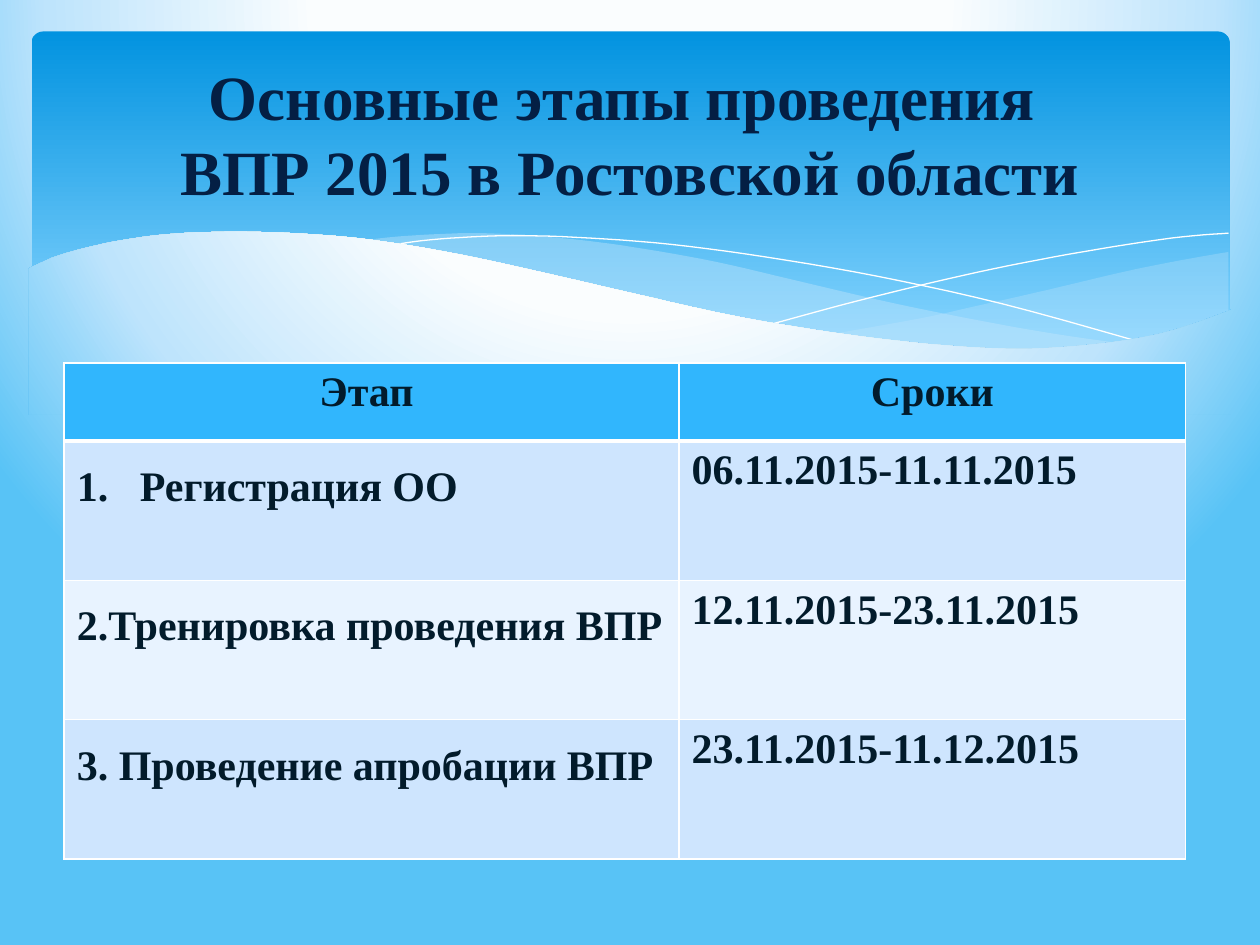
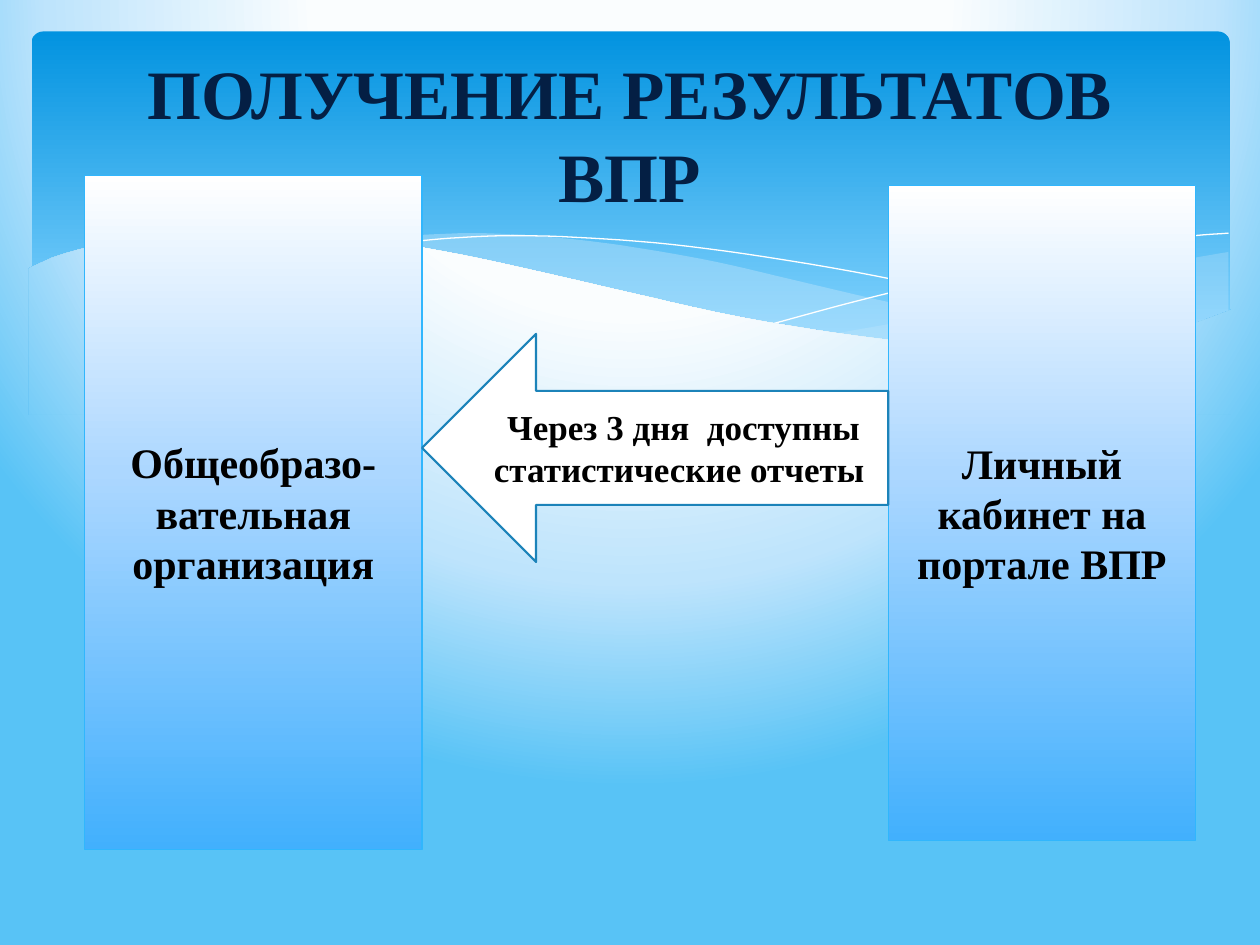
from lxml import etree
from pptx import Presentation
from pptx.dml.color import RGBColor
from pptx.enum.shapes import MSO_SHAPE
from pptx.enum.text import MSO_ANCHOR, MSO_AUTO_SIZE, PP_ALIGN
from pptx.oxml.ns import qn
from pptx.util import Inches, Pt

FONT = "Times New Roman"
TITLE_NAVY = RGBColor(0x04, 0x1F, 0x44)
TABLE_TEXT = RGBColor(0x02, 0x1B, 0x2B)
BLACK = RGBColor(0, 0, 0)
WHITE = RGBColor(0xFF, 0xFF, 0xFF)
ACCENT_BLUE = RGBColor(0x31, 0xB6, 0xFD)
ARROW_BLUE = RGBColor(0x1C, 0x83, 0xB9)
WAVE_TINT = RGBColor(0xC6, 0xE7, 0xFC)
ROW_FILLS = (RGBColor(0xCE, 0xE5, 0xFE), RGBColor(0xE8, 0xF3, 0xFF))

# Gradient stops: position in percent, colour
SKY_STOPS = ((40, RGBColor(0xFA, 0xFD, 0xFE)), (74, RGBColor(0xBE, 0xE4, 0xFC)),
             (100, RGBColor(0x58, 0xC3, 0xF6)))
BAND_STOPS = ((0, RGBColor(0x02, 0x93, 0xE0)), (90, RGBColor(0x83, 0xD3, 0xFE)))
PANEL_STOPS = ((0, WHITE), (44, RGBColor(0xAC, 0xD7, 0xFF)),
               (100, RGBColor(0x42, 0xB0, 0xFD)))
SKY_FOCUS = {"l": 20, "t": -40, "r": 20, "b": 140}

# Boxes: left, top, width, height in inches
BAND_BOX = (0.25, 0.25, 9.51, 2.7)
TITLE_BOX = (0.5, 0.37, 9, 1.37)

# Wave outlines in inches from the corner of the band
UNITS_PER_INCH = 1000
RIGHT_SWELL_TOP = [(9.5, 1.75), (9.1, 1.82), (8.66, 1.91), (8.07, 2.05),
                   (7.54, 2.17), (7.04, 2.28), (6.36, 2.4)]
RIGHT_SWELL_BOTTOM = [(6.36, 2.4), (6.8, 2.46), (7.2, 2.5), (7.67, 2.52), (8.1, 2.52),
                      (8.56, 2.48), (8.96, 2.4), (9.24, 2.32), (9.5, 2.22)]
MIDDLE_SWELL_TOP = [(8.68, 2.48), (8.12, 2.4), (7.5, 2.29), (6.81, 2.15), (6.04, 1.97),
                    (5.44, 1.83), (4.89, 1.73), (4.4, 1.66), (3.95, 1.62), (3.55, 1.6),
                    (3.19, 1.61), (2.88, 1.63), (2.61, 1.66)]
MIDDLE_SWELL_BOTTOM = [(2.61, 1.66), (3.17, 1.74), (3.79, 1.86), (4.24, 1.97), (5.05, 2.15),
                       (5.76, 2.3), (6.4, 2.41), (6.97, 2.49), (7.48, 2.52), (7.93, 2.53),
                       (8.32, 2.52), (8.68, 2.48)]
FALLING_LINE = [(2.84, 1.7), (3.1, 1.66), (3.49, 1.63), (3.91, 1.62), (4.44, 1.64),
                (5.08, 1.69), (5.83, 1.79), (6.7, 1.94), (7.7, 2.16), (8.82, 2.47)]
RISING_LINE = [(5.88, 2.32), (6.47, 2.16), (6.95, 2.04), (7.51, 1.91), (8.11, 1.79),
               (8.7, 1.69), (9.13, 1.63), (9.5, 1.6)]
FRONT_WAVE = [(9.52, 2.21), (9.25, 2.31), (8.95, 2.4), (8.62, 2.46), (8.25, 2.5),
              (7.84, 2.52), (7.36, 2.5), (6.83, 2.45), (6.23, 2.37), (5.54, 2.25),
              (4.78, 2.08), (4.22, 1.95), (3.4, 1.77), (2.67, 1.65), (2.05, 1.6),
              (1.52, 1.59), (1.07, 1.61), (0.7, 1.66), (0.42, 1.72), (0.21, 1.78),
              (0.11, 1.82), (-0.02, 1.88)]
FRONT_WAVE_BASE = [(-0.02, 3.04), (9.52, 3.04)]

STAGES = [("Регистрация ОО", "06.11.2015-11.11.2015"),
          ("2.Тренировка проведения ВПР", "12.11.2015-23.11.2015"),
          ("3. Проведение апробации ВПР", "23.11.2015-11.12.2015")]


def to_inches(box):
    return [Inches(length) for length in box]


def set_gradient(fill, owner, stops, focus=None):
    """Fill with a vertical gradient, or a circular one around a focus."""
    fill.gradient()
    gradient = next(owner.iter(qn("a:gradFill")))
    for child in list(gradient):
        gradient.remove(child)
    stop_list = etree.SubElement(gradient, qn("a:gsLst"))
    for position, color in stops:
        stop = etree.SubElement(stop_list, qn("a:gs"), pos=str(position * 1000))
        etree.SubElement(stop, qn("a:srgbClr"), val=str(color))
    if focus:
        circle = etree.SubElement(gradient, qn("a:path"), path="circle")
        edges = {side: str(percent * 1000) for side, percent in focus.items()}
        etree.SubElement(circle, qn("a:fillToRect"), **edges)
    else:
        etree.SubElement(gradient, qn("a:lin"), ang="5400000", scaled="1")


def add_text(paragraph, text, size, color, alignment=PP_ALIGN.CENTER):
    paragraph.alignment = alignment
    for index, line in enumerate(text.split("\n")):
        if index:
            paragraph.add_line_break()
        run = paragraph.add_run()
        run.text = line
        run.font.name = FONT
        run.font.size = Pt(size)
        run.font.bold = True
        run.font.color.rgb = color


def smooth(points, steps=5):
    """Return a Catmull-Rom curve through the points."""
    padded = [points[0], *points, points[-1]]
    curve = [points[0]]
    for a, b, c, d in zip(padded, padded[1:], padded[2:], padded[3:]):
        for step in range(1, steps + 1):
            t = step / steps
            curve.append(tuple(
                b[i] + t * (c[i] - a[i]) / 2
                + t**2 * (2 * a[i] - 5 * b[i] + 4 * c[i] - d[i]) / 2
                + t**3 * (3 * b[i] - a[i] - 3 * c[i] + d[i]) / 2
                for i in (0, 1)))
    return curve


def add_outline(slide, box, points, close):
    start, *rest = [(round(x * UNITS_PER_INCH), round(y * UNITS_PER_INCH)) for x, y in points]
    builder = slide.shapes.build_freeform(*start, scale=Inches(1) / UNITS_PER_INCH)
    builder.add_line_segments(rest, close=close)
    shape = builder.convert_to_shape(*to_inches(box[:2]))
    shape.shadow.inherit = False
    return shape


def add_wave_band(slide, box):
    # Blue band
    band = slide.shapes.add_shape(MSO_SHAPE.ROUNDED_RECTANGLE, *to_inches(box))
    band.adjustments[0] = 0.034
    band.shadow.inherit = False
    band.line.fill.background()
    set_gradient(band.fill, band._element, BAND_STOPS)

    # Translucent swells
    for top, bottom, opacity in ((RIGHT_SWELL_TOP, RIGHT_SWELL_BOTTOM, 29),
                                 (MIDDLE_SWELL_TOP, MIDDLE_SWELL_BOTTOM, 40)):
        swell = add_outline(slide, box, smooth(top) + smooth(bottom), True)
        swell.line.fill.background()
        swell.fill.solid()
        swell.fill.fore_color.rgb = WAVE_TINT
        color = next(swell._element.iter(qn("a:srgbClr")))
        etree.SubElement(color, qn("a:alpha"), val=str(opacity * 1000))

    # Thin crossing lines
    for points in (FALLING_LINE, RISING_LINE):
        curve = add_outline(slide, box, smooth(points), False)
        curve.fill.background()
        curve.line.color.rgb = WHITE
        curve.line.width = Pt(0)

    # Front wave, filled with the slide background
    wave = add_outline(slide, box, smooth(FRONT_WAVE) + FRONT_WAVE_BASE, True)
    wave.line.fill.background()
    wave._element.set("useBgFill", "1")


def add_title(slide, box, text, size):
    title = slide.shapes.title
    title.left, title.top, title.width, title.height = to_inches(box)
    frame = title.text_frame
    frame.word_wrap = True
    frame.auto_size = MSO_AUTO_SIZE.NONE
    frame.vertical_anchor = MSO_ANCHOR.MIDDLE
    add_text(frame.paragraphs[0], text, size, TITLE_NAVY)
    # Bring the title in front of the band
    slide.shapes._spTree.append(title._element)


def add_wave_slide(presentation, title, title_size):
    slide = presentation.slides.add_slide(presentation.slide_layouts[5])
    set_gradient(slide.background.fill, slide._element, SKY_STOPS, SKY_FOCUS)
    add_wave_band(slide, BAND_BOX)
    add_title(slide, TITLE_BOX, title, title_size)
    return slide


def format_cell(cell, fill, top=1, bottom=1):
    properties = cell._tc.get_or_add_tcPr()
    for side, width in (("L", 1), ("R", 1), ("T", top), ("B", bottom)):
        border = etree.SubElement(properties, qn(f"a:ln{side}"), w=str(Pt(width)))
        solid = etree.SubElement(border, qn("a:solidFill"))
        etree.SubElement(solid, qn("a:srgbClr"), val=str(WHITE))
    cell.fill.solid()
    cell.fill.fore_color.rgb = fill


def number_paragraph(paragraph):
    properties = paragraph._p.get_or_add_pPr()
    properties.set("marL", str(Inches(0.5)))
    properties.set("indent", str(Inches(-0.5)))
    etree.SubElement(properties, qn("a:buFont"), typeface="+mj-lt")
    etree.SubElement(properties, qn("a:buAutoNum"), type="arabicPeriod")


def add_stage_table(slide, box):
    left, top, width, height = box
    header_height = 0.62
    table = slide.shapes.add_table(len(STAGES) + 1, 2, *to_inches(box)).table
    table.horz_banding = False
    table.columns[0].width = Inches(4.88)
    table.columns[1].width = Inches(width - 4.88)
    for row in table.rows:
        row.height = Inches((height - header_height) / len(STAGES))
    table.rows[0].height = Inches(header_height)

    # Header row
    for column, heading in enumerate(("Этап ", "Сроки")):
        cell = table.cell(0, column)
        format_cell(cell, ACCENT_BLUE, bottom=3)
        add_text(cell.text_frame.paragraphs[0], heading, 24, TABLE_TEXT)

    # Stage rows
    for index, stage in enumerate(STAGES):
        for column, text in enumerate(stage):
            cell = table.cell(index + 1, column)
            format_cell(cell, ROW_FILLS[index % 2], top=1 if index else 3)
            add_text(cell.text_frame.paragraphs[0], text, 24, TABLE_TEXT, PP_ALIGN.LEFT)
        stage_cell = table.cell(index + 1, 0)
        stage_cell.vertical_anchor = MSO_ANCHOR.MIDDLE
        stage_cell.margin_bottom = Inches(0.42)
    number_paragraph(table.cell(1, 0).text_frame.paragraphs[0])


def add_labelled_shape(slide, kind, box, lines, size, line_color, line_width):
    shape = slide.shapes.add_shape(kind, *to_inches(box))
    shape.shadow.inherit = False
    shape.line.color.rgb = line_color
    shape.line.width = Pt(line_width)
    frame = shape.text_frame
    frame.word_wrap = True
    frame.vertical_anchor = MSO_ANCHOR.MIDDLE
    for index, line in enumerate(lines):
        paragraph = frame.add_paragraph() if index else frame.paragraphs[0]
        add_text(paragraph, line, size, BLACK)
    return shape


def add_panel(slide, box, lines):
    panel = add_labelled_shape(slide, MSO_SHAPE.RECTANGLE, box, lines, 24, ACCENT_BLUE, 0.75)
    set_gradient(panel.fill, panel._element, PANEL_STOPS)


def add_report_flow(slide, box):
    left, top, width, height = box
    school_width, portal_width = 2.68, 2.44
    add_panel(slide, (left, top, school_width, height),
              ["Общеобразо-", "вательная организация"])
    add_panel(slide, (left + width - portal_width, top + 0.08, portal_width, height - 0.15),
              ["Личный кабинет на портале ВПР"])

    # Arrow fills the gap between the panels
    arrow_box = (left + school_width, top + 1.26, width - school_width - portal_width, 1.81)
    arrow = add_labelled_shape(slide, MSO_SHAPE.LEFT_ARROW, arrow_box,
                               ["Через 3 дня  доступны статистические отчеты "],
                               20, ARROW_BLUE, 1.25)
    arrow.fill.solid()
    arrow.fill.fore_color.rgb = WHITE


def main():
    presentation = Presentation()
    presentation.slide_width = Inches(10)
    presentation.slide_height = Inches(7.5)

    stages_slide = add_wave_slide(
        presentation, "Основные этапы проведения \nВПР 2015 в Ростовской области", 36)
    add_stage_table(stages_slide, (0.51, 2.88, 8.9, 3.94))

    results_slide = add_wave_slide(presentation, "ПОЛУЧЕНИЕ РЕЗУЛЬТАТОВ ВПР", 39.6)
    add_report_flow(results_slide, (0.67, 1.39, 8.82, 5.35))

    presentation.save("out.pptx")


if __name__ == "__main__":
    main()
